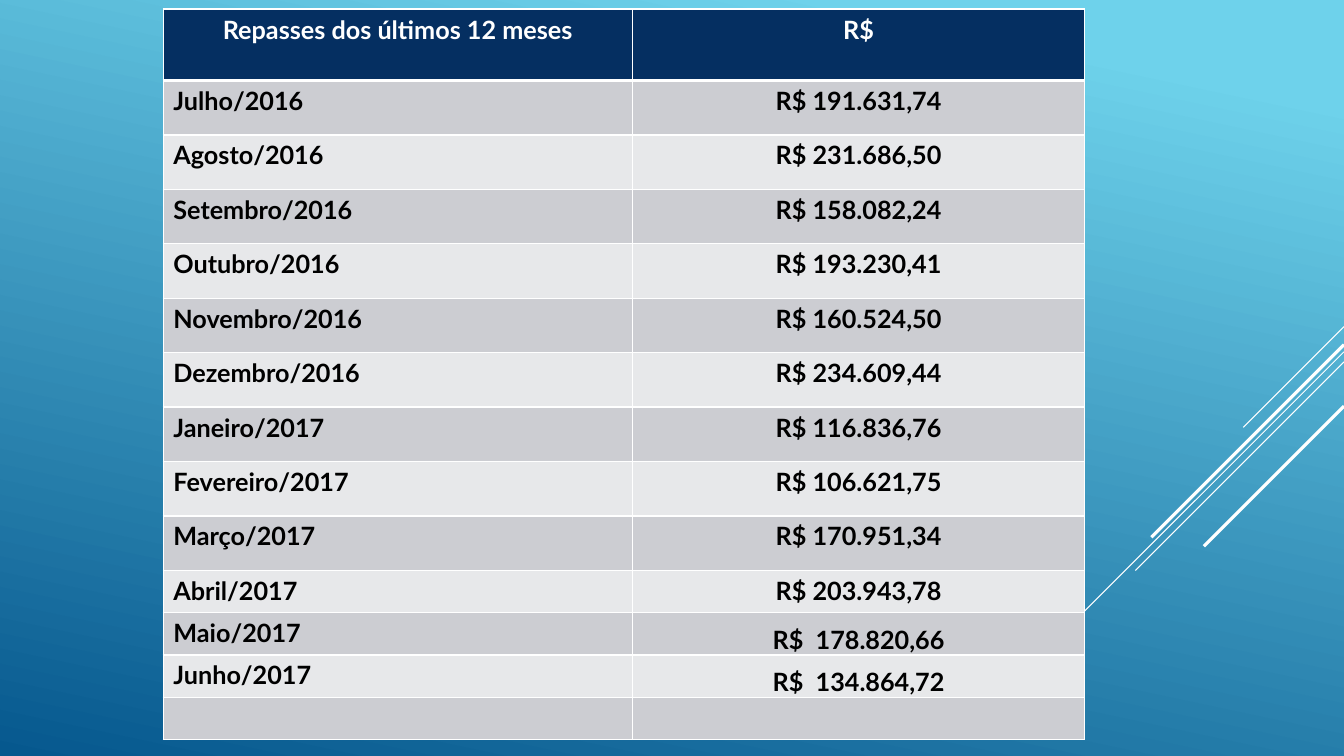
"""Builds the slide that lists the transfers of the last twelve months."""
from dataclasses import dataclass

from lxml.etree import SubElement
from pptx import Presentation
from pptx.dml.color import RGBColor
from pptx.enum.text import MSO_ANCHOR, PP_ALIGN
from pptx.oxml.ns import qn
from pptx.util import Inches, Pt


@dataclass(frozen=True)
class Theme:
    font: str = "Lato"
    size: int = 18
    white: str = "FFFFFF"
    black: str = "000000"
    navy: str = "052F61"
    bands: tuple = ("CCCDD2", "E7E8EA")
    sky: tuple = ((0.1, "6ED2EB"), (1, "06588E"))
    angle: int = 258


def apply(target, values):
    for name, value in values.items():
        setattr(target, name, value)


class Deck:
    def __init__(self, theme):
        self.theme = theme
        self.show = Presentation()
        apply(self.show, {"slide_width": Inches(13.33), "slide_height": Inches(7.5)})
        self.slide = self.show.slides.add_slide(self.show.slide_layouts[6])

    def backdrop(self):
        fill = self.slide.background.fill
        fill.gradient()
        fill.gradient_angle = self.theme.angle
        for stop, (place, color) in zip(fill.gradient_stops, self.theme.sky):
            stop.position = place
            stop.color.rgb = RGBColor.from_string(color)

    def ray(self, top, reach, width):
        edge = 13.33
        line = self.slide.shapes.add_connector(
            1, Inches(edge), Inches(top), Inches(edge - reach), Inches(top + reach))
        line.line.color.rgb = RGBColor.from_string(self.theme.white)
        line.line.width = Pt(width)
        SubElement(line._element.spPr, qn("a:effectLst"))

    def border(self, cell, widths):
        props = cell._tc.get_or_add_tcPr()
        for side, width in zip("LRTB", widths):
            edge = SubElement(props, qn(f"a:ln{side}"), w=str(Pt(width)))
            fill = SubElement(edge, qn("a:solidFill"))
            SubElement(fill, qn("a:srgbClr"), val=self.theme.white)

    def cell(self, cell, text, fill, color, align, widths, form):
        self.border(cell, widths)
        cell.fill.solid()
        cell.fill.fore_color.rgb = RGBColor.from_string(fill)
        apply(cell, form)
        cell.text = text
        para = cell.text_frame.paragraphs[0]
        para.alignment = align
        apply(para.font, {"name": self.theme.font, "size": Pt(self.theme.size), "bold": True})
        para.font.color.rgb = RGBColor.from_string(color)

    def table(self, rows, cols, heights, low):
        theme = self.theme
        grid = self.slide.shapes.add_table(
            len(rows), len(cols), Inches(1.62), Inches(0.09),
            Inches(sum(cols)), Inches(sum(heights))).table
        for col, width in zip(grid.columns, cols):
            col.width = Inches(width)
        tight = {"vertical_anchor": MSO_ANCHOR.BOTTOM, "margin_left": Inches(0.01),
                 "margin_right": Inches(0.01), "margin_top": Inches(0.01), "margin_bottom": 0}
        for r, (texts, height) in enumerate(zip(rows, heights)):
            grid.rows[r].height = Inches(height)
            head = r == 0
            fill = theme.navy if head else theme.bands[(r - 1) % 2]
            color = theme.white if head else theme.black
            widths = (1, 1, 3 if r == 1 else 1, 3 if head else 1)
            for c, text in enumerate(texts):
                align = PP_ALIGN.CENTER if head or c else PP_ALIGN.LEFT
                form = tight if c and r in low else {}
                self.cell(grid.cell(r, c), text, fill, color, align, widths, form)


ROWS = [
    ("Repasses dos últimos 12 meses", "R$"),
    ("Julho/2016", "R$ 191.631,74"),
    ("Agosto/2016", "R$ 231.686,50"),
    ("Setembro/2016", "R$ 158.082,24"),
    ("Outubro/2016", "R$ 193.230,41"),
    ("Novembro/2016", "R$ 160.524,50"),
    ("Dezembro/2016", "R$ 234.609,44"),
    ("Janeiro/2017", "R$ 116.836,76"),
    ("Fevereiro/2017", "R$ 106.621,75"),
    ("Março/2017", "R$ 170.951,34"),
    ("Abril/2017", "R$ 203.943,78"),
    ("Maio/2017", "R$  178.820,66"),
    ("Junho/2017", "R$  134.864,72"),
    ("", ""),
]
RAYS = [(3.24, 1, 0.75), (3.49, 3.26, 0.75), (3.59, 2.07, 0.75),
        (3.42, 1.91, 2.25), (4.03, 1.39, 2.25)]


def main():
    deck = Deck(Theme())
    deck.backdrop()
    for ray in RAYS:
        deck.ray(*ray)
    deck.table(ROWS, (4.65, 4.49), [0.71] + [0.54] * 9 + [0.42] * 4, (11, 12))
    deck.show.save("out.pptx")


if __name__ == "__main__":
    main()
